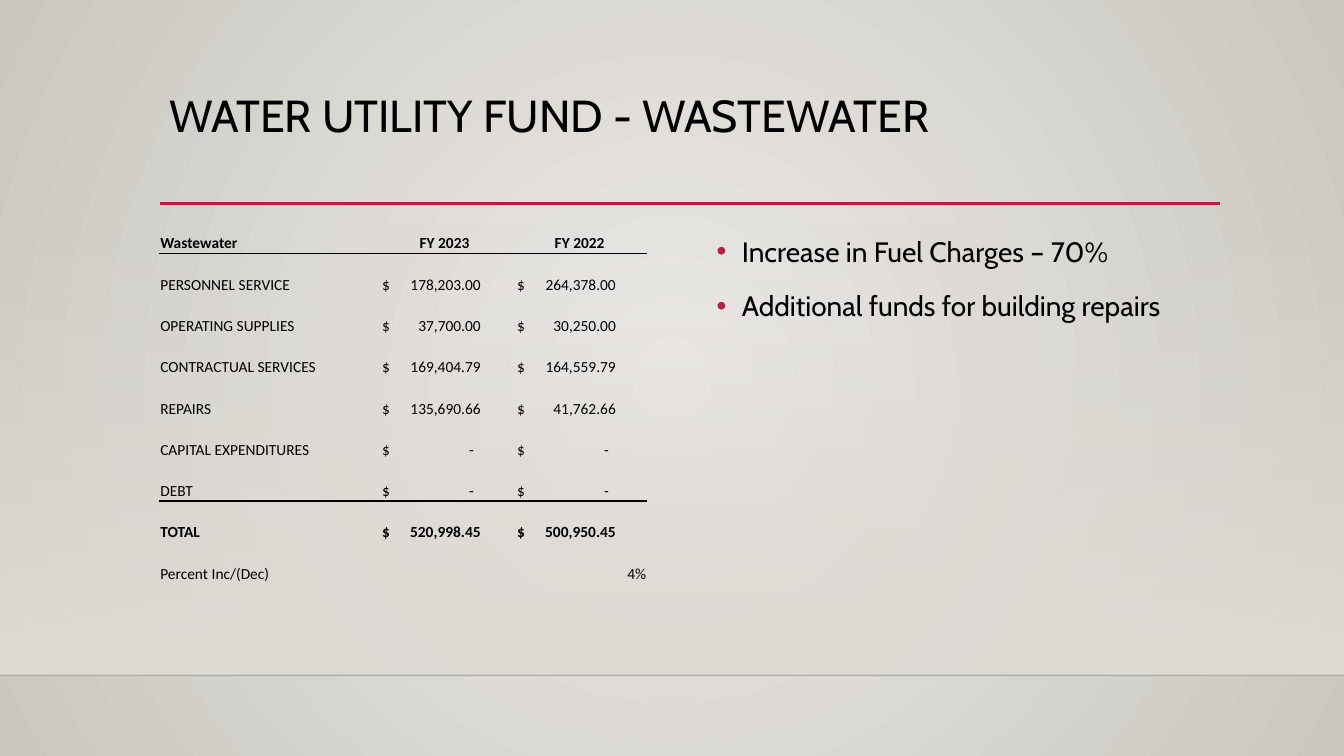
from lxml import etree
from pptx import Presentation
from pptx.dml.color import RGBColor
from pptx.enum import shapes, text
from pptx.oxml.ns import qn
from pptx.util import Inches, Pt

BLACK, RED, SAND = "000000", "B71E42", "DFDBD5"
NO_GRID = "{2D5ABB26-0587-4C30-8999-92F81FD0307C}"
CIRCLE = ('path', {"path": "circle"})
DOWN = ('lin', {"ang": "5400000", "scaled": "0"})

DASH = "-"
ROWS = [
    ("Wastewater", "FY 2023", "FY 2022"),
    ("PERSONNEL SERVICE", "178,203.00", "264,378.00"),
    ("OPERATING SUPPLIES", "37,700.00", "30,250.00"),
    ("CONTRACTUAL SERVICES", "169,404.79", "164,559.79"),
    ("REPAIRS", "135,690.66", "41,762.66"),
    ("CAPITAL EXPENDITURES", DASH, DASH),
    ("DEBT", DASH, DASH),
    ("TOTAL", "520,998.45", "500,950.45"),
    ("Percent Inc/(Dec)", "", "4%"),
]
HEADER, TOTAL, PERCENT = 0, 7, 8
RULES = {HEADER: 0.5, TOTAL - 1: 2}


def color(value):
    """Turn a hex string into a colour."""
    return RGBColor.from_string(value)


def add(parent, tag, **attrs):
    """Append a drawing element to parent."""
    return etree.SubElement(parent, qn("a:" + tag), attrs)


def add_color(parent, value, alpha=100):
    """Append a colour with its opacity in percent."""
    clr = add(parent, "srgbClr", val=value)
    if alpha < 100:
        add(clr, "alpha", val=str(alpha * 1000))


def set_gradient(fill, owner, stops, shade):
    """Fill owner with a gradient of (position, colour, opacity) stops."""
    fill.gradient()
    grad = owner.find(".//" + qn("a:gradFill"))
    for child in list(grad):
        grad.remove(child)
    gs_list = add(grad, "gsLst")
    for pos, value, alpha in stops:
        add_color(add(gs_list, "gs", pos=str(pos * 1000)), value, alpha)
    tag, attrs = shade
    direction = add(grad, tag, **attrs)
    if shade is CIRCLE:
        add(direction, "fillToRect", l="50000", t="50000", r="50000", b="50000")


def add_backdrop(slide):
    """Draw the background glow and the floor band."""
    set_gradient(slide.background.fill, slide.element,
                 [(0, "ECEAE7", 100), (100, "CAC7C1", 100)], CIRCLE)
    sp = slide.shapes.add_shape(shapes.MSO_SHAPE.RECTANGLE, Inches(0), Inches(2.21),
                                Inches(13.33), Inches(4.49))
    sp.shadow.inherit = False
    sp.line.fill.background()
    set_gradient(sp.fill, sp.element.spPr, [(0, SAND, 0), (100, SAND, 100)], DOWN)


def add_rule(slide, left, right, y, value, width, alpha=100):
    """Draw a horizontal line."""
    line = slide.shapes.add_connector(shapes.MSO_CONNECTOR.STRAIGHT, Inches(left),
                                      Inches(y), Inches(right), Inches(y))
    line.line.width = Pt(width)
    line.line.color.rgb = color(value)
    if alpha < 100:
        clr = line.element.spPr.find(".//" + qn("a:srgbClr"))
        add(clr, "alpha", val=str(alpha * 1000))
    add(line.element.spPr, "effectLst")


def set_font(p, name, size, bold=False):
    """Set the font of a paragraph."""
    p.font.name, p.font.size, p.font.bold = name, Pt(size), bold
    p.font.color.rgb = color(BLACK)


def add_text(slide, box, lines, size, spacing, bullets=False):
    """Add a text box with one paragraph per line."""
    sp = slide.shapes.add_textbox(*map(Inches, box))
    tf = sp.text_frame
    tf.word_wrap = True
    for i, line in enumerate(lines):
        p = tf.add_paragraph() if i else tf.paragraphs[0]
        p.text = line
        p.line_spacing = spacing
        p.space_before = Pt(10 if i else 0)
        if bullets:
            pPr = p._p.get_or_add_pPr()
            pPr.set("marL", str(Inches(0.25)))
            pPr.set("indent", str(-Inches(0.25)))
            add_color(add(pPr, "buClr"), RED)
            add(pPr, "buFont", typeface="Arial")
            add(pPr, "buChar", char="•")
        set_font(p, "Cabin", size)


def add_border(cell, width):
    """Draw the bottom border of a cell."""
    line = add(cell._tc.get_or_add_tcPr(), "lnB", w=str(Pt(width)))
    add_color(add(line, "solidFill"), BLACK)


def fill_cell(cell, value, row, col):
    """Write one budget cell, with amounts on a right tab."""
    is_money = col > 0 and HEADER < row < PERCENT
    cell.vertical_anchor = text.MSO_ANCHOR.BOTTOM
    cell.margin_left = Inches(0.05 if is_money else 0.01)
    cell.margin_right = cell.margin_top = Inches(0.01)
    cell.margin_bottom = 0
    if row in RULES:
        add_border(cell, RULES[row])
    cell.fill.background()
    p = cell.text_frame.paragraphs[0]
    p.text = f"$\t{value}" if is_money else value
    if is_money:
        tabs = add(p._p.get_or_add_pPr(), "tabLst")
        add(tabs, "tab", pos=str(Inches(0.91 if value == DASH else 0.98)), algn="r")
    elif col:
        p.alignment = text.PP_ALIGN.CENTER if row == HEADER else text.PP_ALIGN.RIGHT
    set_font(p, "Calibri", 11, row in (HEADER, TOTAL))


def add_budget(slide):
    """Add the budget table."""
    frame = slide.shapes.add_table(len(ROWS), 3, Inches(1.58), Inches(2.21),
                                   Inches(4.84), Inches(3.58))
    table = frame.table
    table.first_row = table.horz_banding = False
    table._tbl.tblPr.find(qn("a:tableStyleId")).text = NO_GRID
    for column, width in zip(table.columns, (2.16, 1.34, 1.34)):
        column.width = Inches(width)
    for r, values in enumerate(ROWS):
        table.rows[r].height = Inches(0.41 if r else 0.3)
        for c, value in enumerate(values):
            fill_cell(table.cell(r, c), value, r, c)


def main():
    """Build and save the slide."""
    prs = Presentation()
    prs.slide_width, prs.slide_height = Inches(13.33), Inches(7.5)
    slide = prs.slides.add_slide(prs.slide_layouts[6])
    add_backdrop(slide)
    add_rule(slide, 0, 13.33, 6.7, BLACK, 1, 20)
    add_rule(slide, 1.59, 12.1, 2.02, RED, 2.5)
    add_text(slide, (1.58, 0.88, 10.5, 1.16), ["WATER UTILITY FUND - WASTEWATER"], 32, 0.9)
    add_budget(slide)
    add_text(slide, (7.01, 2.21, 5.08, 3.76),
             ["Increase in Fuel Charges – 70%", "Additional funds for building repairs"],
             20, 1.2, bullets=True)
    prs.save("out.pptx")


if __name__ == "__main__":
    main()
